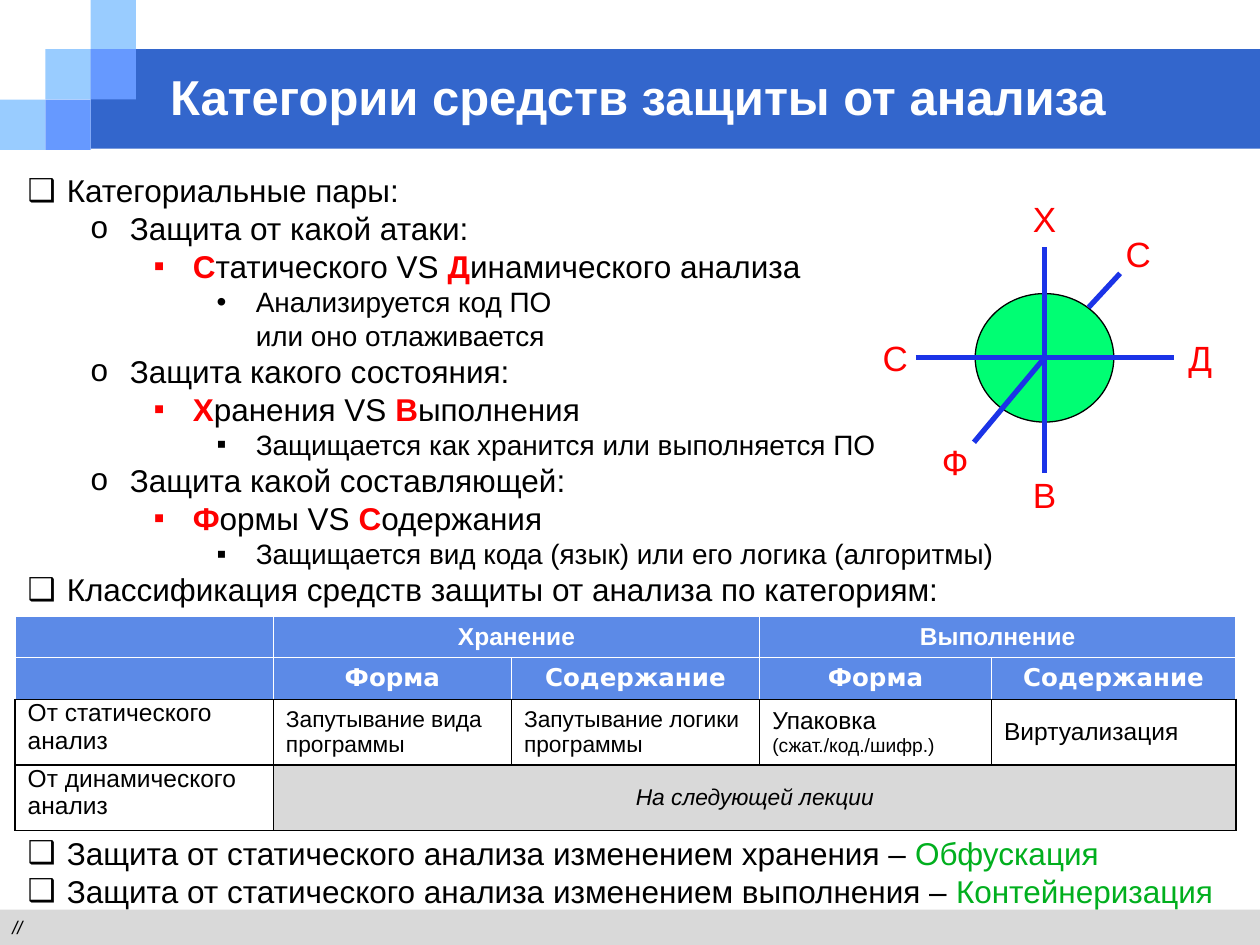
import copy

import pptx
import pptx.dml.color
import pptx.enum.shapes
import pptx.enum.text
import pptx.oxml.ns
import pptx.util
from lxml import etree

Inches, Pt = pptx.util.Inches, pptx.util.Pt
Shape = pptx.enum.shapes.MSO_SHAPE
Anchor = pptx.enum.text.MSO_ANCHOR
Align = pptx.enum.text.PP_ALIGN
AutoSize = pptx.enum.text.MSO_AUTO_SIZE
qn = pptx.oxml.ns.qn

COLORS = {
    "band": "3366CC", "sky": "99CCFF", "blue": "6699FF", "grey": "D9D9D9",
    "header": "5C8AE7", "white": "FFFFFF", "black": "000000", "red": "FF0000",
    "term": "01AF1E", "sphere": "00FE73", "axis": "1B33E7",
}
BULLETS = ["❑", "o", "▪", "▪"]
KEY = {"color": "red", "bold": True}
TERM = {"color": "term"}


def rgb(name):
    return pptx.dml.color.RGBColor.from_string(COLORS[name])


def add_span(para, text, style):
    """Add formatted text; a newline becomes a line break."""
    for number, line in enumerate(text.split("\n")):
        if number:
            para.add_line_break()
            para._p[-1].append(copy.deepcopy(span._r.rPr))
        span = para.add_run()
        span.text = line
        values = {"name": "Arial", "size": Pt(18), "bold": False, **style}
        span.font.color.rgb = rgb(values.pop("color", "black"))
        for key, value in values.items():
            setattr(span.font, key, value)


def set_frame(frame, **values):
    for key, value in values.items():
        setattr(frame, key, value)


def place(shape, left, top, width, height):
    shape.left, shape.top = Inches(left), Inches(top)
    shape.width, shape.height = Inches(width), Inches(height)


def add_block(page, kind, at, fill, line=None):
    block = page.shapes.add_shape(kind, *map(Inches, at))
    block.shadow.inherit = False
    block.fill.solid()
    block.fill.fore_color.rgb = rgb(fill)
    if line:
        block.line.color.rgb = rgb(line)
        block.line.width = Pt(0.75)
    else:
        block.line.fill.background()
    return block


def add_header(page):
    add_block(page, Shape.RECTANGLE, (0.72, 0.39, 9.28, 0.79), "band")
    side, rise = 0.36, 0.4
    squares = [(0, 2, "sky"), (1, 1, "sky"), (2, 0, "sky"), (2, 1, "blue"), (1, 2, "blue")]
    for col, row, fill in squares:
        add_block(page, Shape.RECTANGLE, (col * side, row * rise - 0.01 * (row > 0), side, rise), fill)
    title = page.shapes.title
    place(title, 1.25, 0.5, 8.08, 0.53)
    page.shapes._spTree.append(title.element)
    set_frame(title.text_frame, vertical_anchor=Anchor.MIDDLE, auto_size=AutoSize.NONE)
    para = title.text_frame.paragraphs[0]
    para.alignment = Align.LEFT
    add_span(para, "Категории средств защиты от анализа",
             {"size": Pt(28), "bold": True, "color": "white"})


def add_footer(page):
    box = add_block(page, Shape.RECTANGLE, (0, 7.22, 10, 0.28), "grey")
    set_frame(box.text_frame, vertical_anchor=Anchor.MIDDLE, word_wrap=True)
    para = box.text_frame.paragraphs[0]
    para.alignment = Align.LEFT
    add_span(para, "//", {"size": Pt(10.5), "italic": True})


def set_bullet(para, level, char):
    props = para._p.get_or_add_pPr()
    props.set("marL", str(Inches(0.31 + 0.5 * level)))
    props.set("indent", str(Inches(-0.31)))
    etree.SubElement(props, qn("a:buFont")).set("typeface", "Arial")
    etree.SubElement(props, qn("a:buChar")).set("char", char)


def pair(first, second):
    """Two opposed terms with their initials marked."""
    return [(first[0], KEY), (first[1:] + " VS ", {}), (second[0], KEY), (second[1:], {})]


def add_list(page):
    # Level, spans, and a bullet where it differs from its level
    items = [
        (0, [("Категориальные пары:", {})]),
        (1, [("Защита от какой атаки:", {})]),
        (2, pair("Статического", "Динамического анализа")),
        (3, [("Анализируется код ПО\nили оно отлаживается", {})], "•"),
        (1, [("Защита какого состояния:", {})]),
        (2, pair("Хранения", "Выполнения")),
        (3, [("Защищается как хранится или выполняется ПО", {})]),
        (1, [("Защита какой составляющей:", {})]),
        (2, pair("Формы", "Содержания")),
        (3, [("Защищается вид кода (язык) или его логика (алгоритмы)", {})]),
        (0, [("Классификация средств защиты от анализа по категориям:", {})]),
        (0, [("Защита от статического анализа изменением хранения – ", {}), ("Обфускация", TERM)]),
        (0, [("Защита от статического анализа изменением выполнения – ", {}),
             ("Контейнеризация", TERM)]),
    ]
    body = page.placeholders[1]
    place(body, 0.12, 1.31, 9.76, 6.02)
    page.shapes._spTree.append(body.element)
    frame = body.text_frame
    set_frame(frame, vertical_anchor=Anchor.TOP, auto_size=AutoSize.NONE, word_wrap=True)
    for number, (level, spans, *bullet) in enumerate(items):
        para = frame.add_paragraph() if number else frame.paragraphs[0]
        # The first line after the table leaves room for it
        gap = 129 if number == len(items) - 2 else 0
        set_frame(para, level=level, space_before=Pt(gap), space_after=Pt(0), line_spacing=1.0)
        set_bullet(para, level, bullet[0] if bullet else BULLETS[level])
        for text, style in spans:
            add_span(para, text, {"size": Pt(16 if level == 3 else 18), **style})


def set_borders(cell, sides):
    props = cell._tc.get_or_add_tcPr()
    for number, (side, color) in enumerate(sides.items()):
        line = etree.Element(qn("a:ln" + side), w=str(Pt(1)))
        fill = etree.SubElement(line, qn("a:solidFill"))
        etree.SubElement(fill, qn("a:srgbClr")).set("val", COLORS[color])
        props.insert(number, line)


def fill_cell(cell, lines, align, anchor):
    # Without vertical margins the rows keep their heights, empty cells included
    set_frame(cell, vertical_anchor=anchor, margin_top=0, margin_bottom=0)
    frame = cell.text_frame
    if not lines:
        end = etree.SubElement(frame.paragraphs[0]._p, qn("a:endParaRPr"))
        end.set("sz", "1400")
    for number, (text, style) in enumerate(lines):
        para = frame.add_paragraph() if number else frame.paragraphs[0]
        para.alignment = align
        add_span(para, text, style)


def add_categories(page):
    head = {"size": Pt(14), "bold": True, "color": "white"}
    sub = {**head, "name": "DejaVu Sans"}
    big, mid, small = ({"size": Pt(size)} for size in (14, 13, 11))
    rows = [
        [[], [("Хранение", head)], [], [("Выполнение", head)], []],
        [[]] + [[("Форма", sub)], [("Содержание", sub)]] * 2,
        [[("От статического\nанализ", big)], [("Запутывание вида программы", mid)],
         [("Запутывание логики программы", mid)],
         [("Упаковка", big), ("(сжат./код./шифр.)", small)], [("Виртуализация", big)]],
        [[("От динамического\nанализ", big)],
         [("На следующей лекции", {**mid, "italic": True})], [], [], []],
    ]
    table = page.shapes.add_table(4, 5, *map(Inches, (0.12, 4.89, 9.69, 1.7))).table
    for col, width in zip(table.columns, (2.05, 1.89, 1.97, 1.84, 1.94)):
        col.width = Inches(width)
    for row, height in zip(table.rows, (0.33, 0.33, 0.52, 0.52)):
        row.height = Inches(height)
    for row, first, last in ((0, 1, 2), (0, 3, 4), (3, 1, 4)):
        table.cell(row, first).merge(table.cell(row, last))
    for r, row in enumerate(rows):
        for c, lines in enumerate(row):
            cell = table.cell(r, c)
            header, merged = r < 2, r == 3 and c > 0
            cell.fill.solid()
            cell.fill.fore_color.rgb = rgb("header" if header else "grey" if merged else "white")
            sides = dict.fromkeys("LRTB", "white" if header else "black")
            if r == 1:
                sides["B"] = "black"
            set_borders(cell, sides)
            fill_cell(cell, lines, Align.CENTER if header or merged else Align.LEFT,
                      Anchor.TOP if c == 0 and not header else Anchor.MIDDLE)


def add_label(page, text, left, top, width):
    box = page.shapes.add_textbox(*map(Inches, (left, top, width, 0.44)))
    set_frame(box.text_frame, word_wrap=False, auto_size=AutoSize.NONE)
    para = box.text_frame.paragraphs[0]
    para.alignment = Align.CENTER
    add_span(para, text, {"size": Pt(20), "color": "red"})
    return box


def add_axis(page, *ends):
    axis = page.shapes.add_connector(pptx.enum.shapes.MSO_CONNECTOR.STRAIGHT, *map(Inches, ends))
    axis.line.color.rgb = rgb("axis")
    axis.line.width = Pt(3)
    etree.SubElement(axis._element.spPr, qn("a:effectLst"))
    return axis


def add_sphere(page):
    add_block(page, Shape.OVAL, (7.74, 2.33, 1.1, 1.02), "sphere", "black")
    across = add_axis(page, 7.27, 2.84, 9.32, 2.84)
    upright = add_axis(page, 8.29, 3.75, 8.29, 1.96)
    add_axis(page, 7.73, 3.51, 8.29, 2.84)
    add_axis(page, 8.64, 2.44, 8.89, 2.17)
    add_label(page, "С", 6.9, 2.62, 0.41)
    across.end_connect(add_label(page, "Д", 9.32, 2.62, 0.41), 1)
    upright.end_connect(add_label(page, "Х", 8.1, 1.52, 0.38), 2)
    add_label(page, "В", 8.1, 3.71, 0.38)
    add_label(page, "Ф", 7.37, 3.45, 0.42)
    add_label(page, "С", 8.83, 1.8, 0.41)


def main():
    deck = pptx.Presentation()
    deck.slide_width, deck.slide_height = Inches(10), Inches(7.5)
    page = deck.slides.add_slide(deck.slide_layouts[1])
    add_header(page)
    add_footer(page)
    add_list(page)
    add_categories(page)
    add_sphere(page)
    deck.save("out.pptx")


if __name__ == "__main__":
    main()
